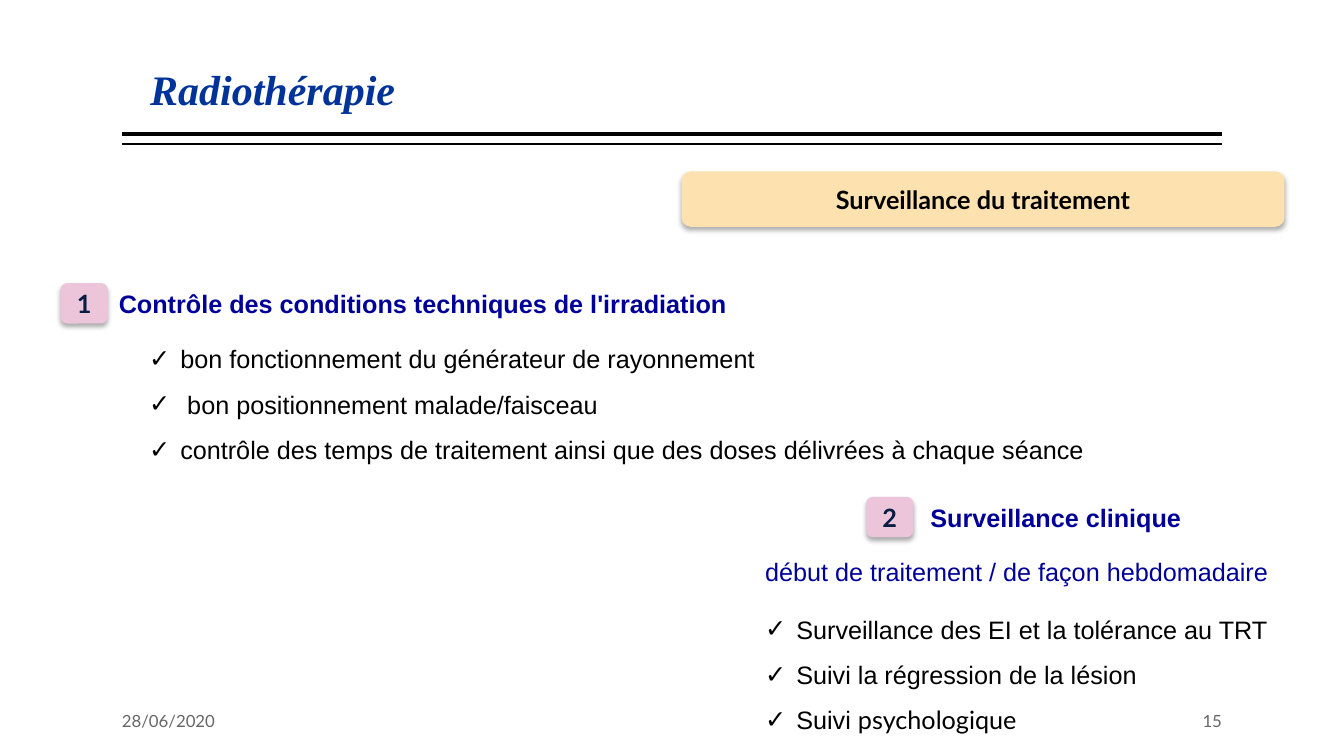
from dataclasses import dataclass

from lxml import etree
from pptx import Presentation
from pptx.dml.color import RGBColor
from pptx.enum.shapes import MSO_CONNECTOR, MSO_SHAPE
from pptx.enum.text import MSO_ANCHOR, MSO_AUTO_SIZE, PP_ALIGN
from pptx.oxml.ns import qn
from pptx.util import Pt

LINE, ROUND = MSO_CONNECTOR.STRAIGHT, MSO_SHAPE.ROUNDED_RECTANGLE
TOP, MIDDLE = MSO_ANCHOR.TOP, MSO_ANCHOR.MIDDLE
NO_FIT = MSO_AUTO_SIZE.NONE
LEFT, CENTER, RIGHT = PP_ALIGN.LEFT, PP_ALIGN.CENTER, PP_ALIGN.RIGHT
PX = 9144  # 100 px to the inch


@dataclass(frozen=True)
class Theme:
    title: str = "003399"
    head: str = "000099"
    ink: str = "000000"
    cream: str = "FDE2B0"
    pink: str = "ECC5DB"
    navy: str = "091D44"
    grey: str = "666666"
    serif: str = "Times New Roman"
    sans: str = "Arial"
    label: str = "Lato"
    big: int = 30
    body: int = 18
    small: int = 12


THEME = Theme()


def emu(*sizes):
    return [size * PX for size in sizes]


def style(run, size, face, color, bold=False, italic=False):
    font = run.font
    font.size, font.name = Pt(size), face
    font.bold, font.italic = bold, italic
    font.color.rgb = RGBColor.from_string(color)


def add_text(slide, box, text, size, face, color, bold=False,
             align=LEFT, anchor=TOP, wrap=False, inset=10):
    frame = slide.shapes.add_textbox(*emu(*box)).text_frame
    frame.word_wrap, frame.vertical_anchor = wrap, anchor
    frame.margin_left = frame.margin_right = inset * PX
    frame.text = text
    for para in frame.paragraphs:
        para.alignment = align
        style(para.runs[0], size, face, color, bold)
    return frame


def add_title(slide, box, text):
    title = slide.shapes.title
    title.left, title.top, title.width, title.height = emu(*box)
    frame = title.text_frame
    frame.text = text
    frame.auto_size, frame.vertical_anchor = NO_FIT, MIDDLE
    para = frame.paragraphs[0]
    para.alignment = LEFT
    style(para.runs[0], THEME.big, THEME.serif, THEME.title, True, True)


def add_rules(slide, box):
    left, top, width, height = box
    for y, weight in ((top, 3), (top + height, 1)):
        rule = slide.shapes.add_connector(LINE, *emu(left + width, y, left, y))
        rule.line.width = Pt(weight)
        rule.line.color.rgb = RGBColor.from_string(THEME.ink)
        etree.SubElement(rule.element.spPr, qn("a:effectLst"))


def add_badge(slide, box, text, fill, color):
    badge = slide.shapes.add_shape(ROUND, *emu(*box))
    badge.fill.solid()
    badge.fill.fore_color.rgb = RGBColor.from_string(fill)
    badge.line.fill.background()
    # Soft shadow straight below
    badge.shadow.inherit = False
    effects = badge.element.spPr.find(qn("a:effectLst"))
    shadow = etree.SubElement(effects, qn("a:outerShdw"), blurRad=str(Pt(3.5)),
                              dist=str(Pt(2.2)), dir="5400000", rotWithShape="0")
    shade = etree.SubElement(shadow, qn("a:srgbClr"), val=THEME.ink)
    etree.SubElement(shade, qn("a:alpha"), val="32000")
    # Label
    frame = badge.text_frame
    frame.text, frame.vertical_anchor = text, MIDDLE
    para = frame.paragraphs[0]
    para.alignment = CENTER
    style(para.runs[0], THEME.body, THEME.label, color, True)


def add_head(slide, box, number, text, gap):
    left, top, width, height = box
    badge = 47
    add_badge(slide, (left, top, badge, height), number, THEME.pink, THEME.navy)
    start = badge + gap
    add_text(slide, (left + start, top, width - start, height), text,
             THEME.body, THEME.sans, THEME.head, True)


def add_checks(slide, box, items):
    frame = add_text(slide, box, "\n".join(items),
                     THEME.body, THEME.sans, THEME.ink)
    for para in frame.paragraphs:
        para.line_spacing = 1.5
        props = para._p.get_or_add_pPr()
        props.set("marL", str(31 * PX))
        props.set("indent", str(-31 * PX))
        etree.SubElement(props, qn("a:buFont"), typeface=THEME.sans)
        etree.SubElement(props, qn("a:buChar"), char="✓")
    return frame


def add_footer(slide, box, date, number):
    left, top, width, height = box
    part = 200
    for x, text, align in ((left, date, LEFT),
                           (left + width - part, number, RIGHT)):
        add_text(slide, (x, top, part, height), text, THEME.small, THEME.label,
                 THEME.grey, align=align, anchor=MIDDLE, wrap=True, inset=0)


def add_control(slide, box):
    left, top, width, height = box
    add_head(slide, (left, top, 677, 40), "1",
             "Contrôle des conditions techniques de l'irradiation", 1)
    add_checks(slide, (left + 78, top + 40, width - 78, height - 40), [
        "bon fonctionnement du générateur de rayonnement",
        " bon positionnement malade/faisceau",
        "contrôle des temps de traitement ainsi que des doses "
        "délivrées à chaque séance",
    ])


def add_clinic(slide, box):
    left, top, width, height = box
    add_head(slide, (left + 110, top, 325, 40), "2", "Surveillance clinique", 7)
    add_text(slide, (left, top + 54, width, 40),
             "début de traitement / de façon hebdomadaire",
             THEME.body, THEME.sans, THEME.head)
    frame = add_checks(slide, (left, top + 96, width, height - 96), [
        "Surveillance des EI et la tolérance au TRT",
        "Suivi la régression de la lésion",
        "Suivi ",
    ])
    last = frame.paragraphs[-1].add_run()
    last.text = "psychologique"
    style(last, THEME.body, THEME.label, THEME.ink)


def main():
    deck = Presentation()
    deck.slide_width, deck.slide_height = emu(1333, 750)
    slide = deck.slides.add_slide(deck.slide_layouts[5])
    add_rules(slide, (121, 133, 1091, 10))
    add_title(slide, (139, 29, 302, 117), "Radiothérapie")
    add_badge(slide, (676, 170, 598, 55), "Surveillance du traitement",
              THEME.cream, THEME.ink)
    add_control(slide, (60, 281, 1034, 181))
    add_clinic(slide, (749, 493, 524, 237))
    add_footer(slide, (121, 695, 1091, 40), "28/06/2020", "15")
    deck.save("out.pptx")


if __name__ == "__main__":
    main()
